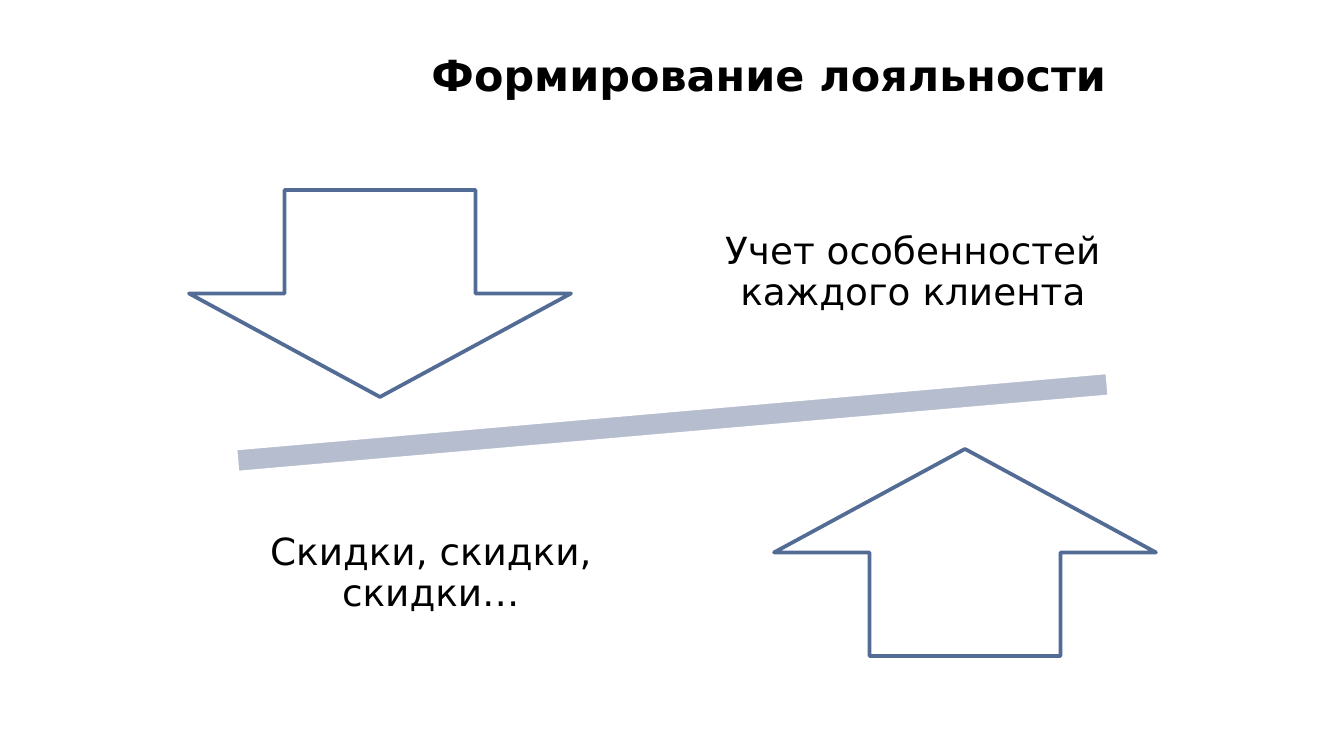
from pptx import Presentation
from pptx.dml.color import RGBColor
from pptx.enum.shapes import MSO_SHAPE as SHAPE
from pptx.enum.text import MSO_ANCHOR as ANCHOR, PP_ALIGN as ALIGN
from pptx.util import Pt

PX = 914400 / 134.4
FONT = "DejaVu Sans"
BLACK = RGBColor(0x00, 0x00, 0x00)
WHITE = RGBColor(0xFF, 0xFF, 0xFF)
BAR = RGBColor(0xB6, 0xBD, 0xCF)
BLUE = RGBColor(0x53, 0x6C, 0x95)


def px(*lengths):
    """Turn pixel lengths into EMU."""
    return [round(n * PX) for n in lengths]


def write(tf, text, size, align, bold=False):
    tf.word_wrap = True
    tf.vertical_anchor = ANCHOR.MIDDLE
    p = tf.paragraphs[0]
    p.alignment = align
    r = p.add_run()
    r.text = text
    r.font.name = FONT
    r.font.size = Pt(size)
    r.font.bold = bold
    r.font.color.rgb = BLACK
    return p


prs = Presentation()
prs.slide_width, prs.slide_height = px(1344, 756)
s = prs.slides.add_slide(prs.slide_layouts[5])

title = s.shapes.title
title.left, title.top, title.width, title.height = px(418, 39, 892, 71)
write(title.text_frame, "Формирование лояльности", 23, ALIGN.LEFT, bold=True)

# Tilted balance bar, then the two opposing arrows
for kind, box, angle, fill, line in [
    (SHAPE.MATH_MINUS, (77, 371, 1191, 103), 355, BAR, WHITE),
    (SHAPE.DOWN_ARROW, (189, 190, 382, 207), 0, WHITE, BLUE),
    (SHAPE.UP_ARROW, (774, 449, 382, 207), 0, WHITE, BLUE),
]:
    sp = s.shapes.add_shape(kind, *px(*box))
    sp.rotation = angle
    sp.shadow.inherit = False
    sp.fill.solid()
    sp.fill.fore_color.rgb = fill
    sp.line.color.rgb = line
    sp.line.width = Pt(2)

for left, top, text in [
    (665, 164, "Учет особенностей каждого клиента"),
    (183, 465, "Скидки, скидки, скидки…"),
]:
    tf = s.shapes.add_textbox(*px(left, top, 496, 218)).text_frame
    tf.margin_left, tf.margin_top, tf.margin_right, tf.margin_bottom = px(21, 21, 21, 21)
    p = write(tf, text, 20, ALIGN.CENTER)
    p.line_spacing = 0.9

prs.save("out.pptx")
